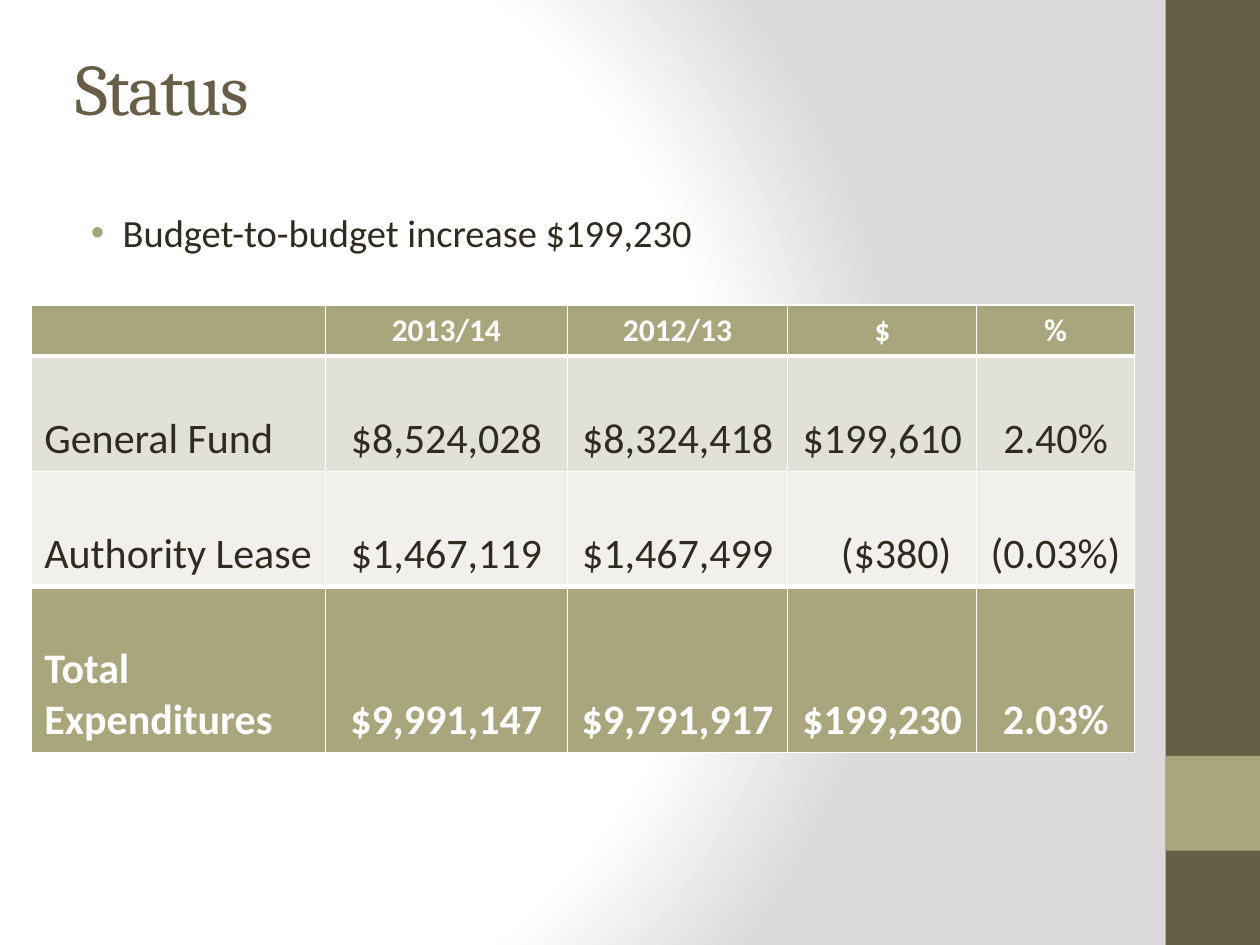
import pptx
import pptx.dml.color
import pptx.enum.shapes
import pptx.enum.text
import pptx.oxml
import pptx.oxml.ns
import pptx.util
from pptx.util import Cm, Pt

BROWN, OLIVE, INK, WHITE = "675E47", "A9A57C", "2F2B20", "FFFFFF"
TITLE = "Status"
BULLET = "Budget-to-budget increase $199,230"
ROWS = [
    ["", "2013/14", "2012/13", "$", "%"],
    ["General Fund", "$8,524,028", "$8,324,418", "$199,610", "2.40%"],
    ["Authority Lease", "$1,467,119", "$1,467,499", "($380)", "(0.03%)"],
    ["Total Expenditures", "$9,991,147", "$9,791,917", "$199,230", "2.03%"],
]
# height, fill, text colour, bold, size, top border, bottom border
ROW_STYLES = [
    (1.01, OLIVE, WHITE, True, 18, 1, 3),
    (2.32, "E2E1D7", INK, False, 24, 3, 1),
    (2.32, "F1F0EC", INK, False, 24, 1, 3),
    (3.35, OLIVE, WHITE, True, 24, 3, 1),
]
COLUMN_WIDTHS = [5.92, 4.88, 4.44, 3.81, 3.18]
BARS = [(0, 19.05, BROWN), (15.24, 1.91, OLIVE)]  # top, height, fill
BAR_LEFT, BAR_WIDTH = 23.5, 1.9
GRADIENT = [(0, WHITE), (75, WHITE), (100, "DADADA")]

ALIGN = pptx.enum.text.PP_ALIGN
ANCHOR = pptx.enum.text.MSO_ANCHOR
NAMESPACE = pptx.oxml.ns.nsdecls("a")


def paint(fill, colour):
    fill.solid()
    fill.fore_color.rgb = pptx.dml.color.RGBColor.from_string(colour)


def write(frame, text, size=24, colour=INK, font="Calibri", bold=False, align=ALIGN.LEFT):
    para = frame.paragraphs[0]
    para.alignment = align
    para.font.size = Pt(size)
    if text:
        span = para.add_run()
        span.text = text
        span.font.size, span.font.name, span.font.bold = Pt(size), font, bold
        paint(span.font.fill, colour)
    return para


def place(shape, left, top, width, height):
    shape.left, shape.top, shape.width, shape.height = map(Cm, (left, top, width, height))


def paint_background(slide):
    """Shade the slide with a circular gradient centred left of the middle."""
    slide.background.fill.solid()
    holder = slide.element.find(".//" + pptx.oxml.ns.qn("p:bgPr"))
    stops = "".join(
        f'<a:gs pos="{pos * 1000}"><a:srgbClr val="{colour}"/></a:gs>' for pos, colour in GRADIENT
    )
    holder.replace(holder[0], pptx.oxml.parse_xml(
        f'<a:gradFill {NAMESPACE} rotWithShape="1"><a:gsLst>{stops}</a:gsLst><a:path path="circle">'
        '<a:fillToRect l="20000" t="50000" r="100000" b="50000"/></a:path></a:gradFill>'))


def add_bars(slide):
    for top, height, colour in BARS:
        bar = slide.shapes.add_shape(
            pptx.enum.shapes.MSO_SHAPE.RECTANGLE, Cm(BAR_LEFT), Cm(top), Cm(BAR_WIDTH), Cm(height))
        bar.shadow.inherit = False
        paint(bar.fill, colour)
        bar.line.fill.background()


def fill_title(title):
    place(title, 1.27, 0.76, 22.86, 1.98)
    frame = title.text_frame
    frame.vertical_anchor = ANCHOR.MIDDLE
    frame.auto_size = pptx.enum.text.MSO_AUTO_SIZE.NONE
    para = write(frame, TITLE, size=41.4, colour=BROWN, font="Cambria")
    para.runs[0].font._element.set("spc", "-100")


def fill_body(body):
    place(body, 1.27, 2.97, 22.86, 13.84)
    frame = body.text_frame
    frame.vertical_anchor = ANCHOR.TOP
    frame.auto_size = pptx.enum.text.MSO_AUTO_SIZE.NONE
    frame.margin_top = Cm(1.24)
    para = write(frame, BULLET, size=22)
    para.space_before = Pt(0)
    properties = para._p.get_or_add_pPr()
    properties.set("marL", str(Cm(0.95)))
    properties.set("indent", str(Cm(-0.64)))
    mark = [
        f'<a:buClr {NAMESPACE}><a:srgbClr val="{OLIVE}"/></a:buClr>',
        f'<a:buFont {NAMESPACE} typeface="Arial"/>',
        f'<a:buChar {NAMESPACE} char="•"/>',
    ]
    spacing = properties.find(pptx.oxml.ns.qn("a:spcBef"))
    for piece in reversed(mark):
        spacing.addnext(pptx.oxml.parse_xml(piece))


def add_borders(cell, top, bottom):
    properties = cell._tc.get_or_add_tcPr()
    for index, (side, width) in enumerate(zip("LRTB", (1, 1, top, bottom))):
        properties.insert(index, pptx.oxml.parse_xml(
            f'<a:ln{side} {NAMESPACE} w="{Pt(width)}"><a:solidFill><a:srgbClr val="{WHITE}"/>'
            f'</a:solidFill></a:ln{side}>'))


def add_budget_table(slide):
    table = slide.shapes.add_table(
        len(ROWS), len(COLUMN_WIDTHS), Cm(0.64), Cm(6.15),
        Cm(sum(COLUMN_WIDTHS)), Cm(sum(style[0] for style in ROW_STYLES))).table
    for column, width in zip(table.columns, COLUMN_WIDTHS):
        column.width = Cm(width)
    for row, texts, style in zip(table.rows, ROWS, ROW_STYLES):
        height, fill, colour, bold, size, top, bottom = style
        row.height = Cm(height)
        for index, (cell, text) in enumerate(zip(row.cells, texts)):
            paint(cell.fill, fill)
            add_borders(cell, top, bottom)
            cell.vertical_anchor = ANCHOR.BOTTOM
            if index == 0:
                cell.margin_right = Cm(0.15)
            if text == "($380)":
                cell.margin_left = Cm(0.82)
            write(cell.text_frame, text, size=size, colour=colour, bold=bold,
                  align=ALIGN.CENTER if index else ALIGN.LEFT)


def main():
    deck = pptx.Presentation()
    deck.slide_width, deck.slide_height = Cm(25.4), Cm(19.05)
    page = deck.slides.add_slide(deck.slide_layouts[1])
    paint_background(page)
    add_bars(page)
    fill_title(page.shapes.title)
    fill_body(page.placeholders[1])
    add_budget_table(page)
    deck.save("out.pptx")


if __name__ == "__main__":
    main()
